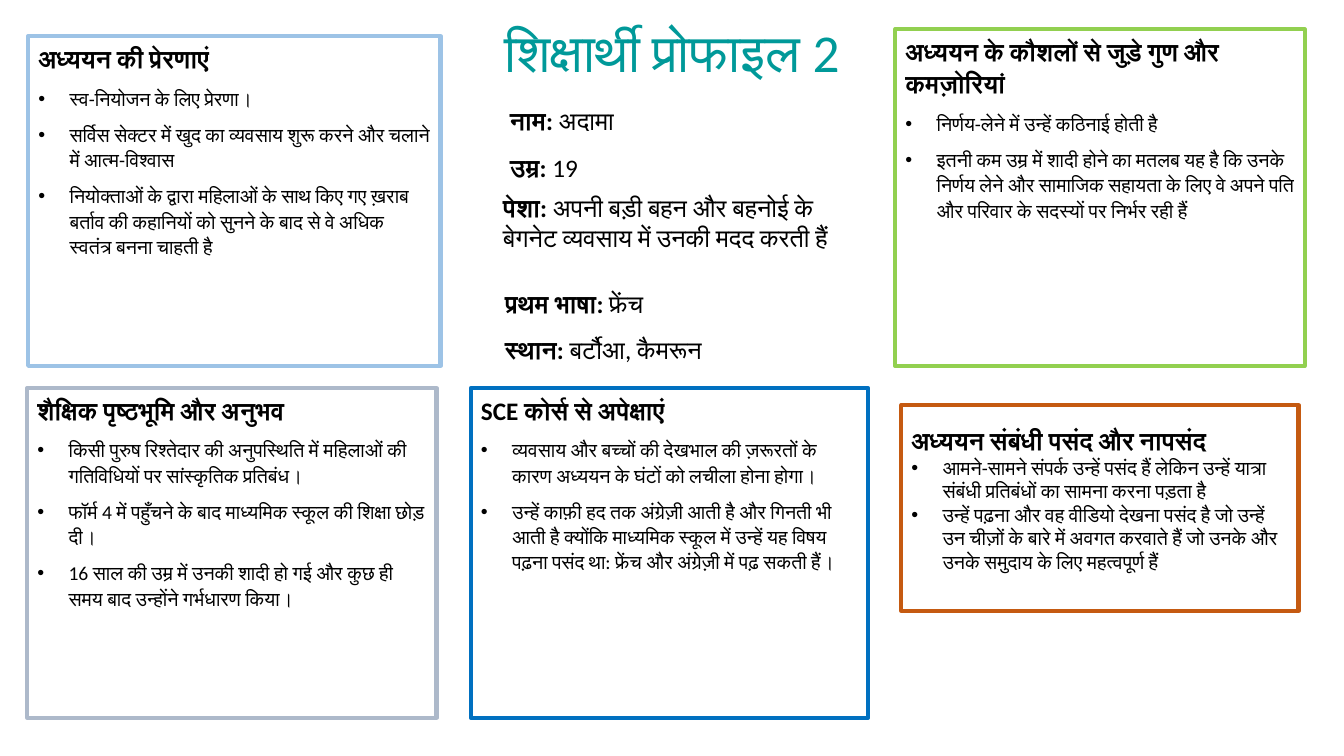
from dataclasses import dataclass
from typing import Optional

from lxml.etree import SubElement
from pptx import Presentation
from pptx.dml.color import RGBColor
from pptx.enum.shapes import MSO_SHAPE
from pptx.enum.text import MSO_ANCHOR, MSO_AUTO_SIZE, PP_ALIGN
from pptx.oxml.ns import qn
from pptx.shapes.autoshape import Shape
from pptx.slide import Slide
from pptx.text.text import TextFrame, _Paragraph
from pptx.util import Inches, Pt


@dataclass(frozen=True)
class Theme:
    font: str = "Calibri"
    ink: str = "000000"
    paper: str = "FFFFFF"
    title_color: str = "009999"
    title_size: int = 38
    heading_size: int = 18
    bullet_size: int = 14
    border_width: int = 3
    hanging: float = 0.31


@dataclass(frozen=True)
class Box:
    left: float
    top: float
    width: float
    height: float


@dataclass(frozen=True)
class Panel:
    box: Box
    border: str
    heading: str
    bullets: tuple[str, ...]
    placeholder: Optional[int] = None
    heading_spacing: float = 1.07
    bullet_spacing: float = 1.07
    space_after: int = 8


@dataclass(frozen=True)
class Fact:
    box: Box
    label: str
    value: str


THEME = Theme()

PANELS = (
    Panel(Box(0.28, 0.36, 4.09, 3.27), "9DC3E6", "अध्ययन की प्रेरणाएं", (
        "स्व-नियोजन के लिए प्रेरणा।",
        "सर्विस सेक्टर में खुद का व्यवसाय शुरू करने और चलाने में आत्म-विश्वास",
        "नियोक्ताओं के द्वारा महिलाओं के साथ किए गए ख़राब बर्ताव की कहानियों को "
        "सुनने के बाद से वे अधिक स्वतंत्र बनना चाहती है",
    ), placeholder=1),
    Panel(Box(8.88, 0.29, 4.06, 3.34), "92D050", "अध्ययन के कौशलों से जुड़े गुण और कमज़ोरियां", (
        "निर्णय-लेने में उन्हें कठिनाई होती है",
        "इतनी कम उम्र में शादी होने का मतलब यह है कि उनके निर्णय लेने और सामाजिक "
        "सहायता के लिए वे अपने पति और परिवार के सदस्यों पर निर्भर रही हैं",
    ), placeholder=2),
    Panel(Box(0.27, 3.85, 4.06, 3.27), "ADB9CA", "शैक्षिक पृष्ठभूमि और अनुभव", (
        "किसी पुरुष रिश्तेदार की अनुपस्थिति में महिलाओं की गतिविधियों पर सांस्कृतिक प्रतिबंध।",
        "फॉर्म 4 में पहुँचने के बाद माध्यमिक स्कूल की शिक्षा छोड़ दी।",
        "16 साल की उम्र में उनकी शादी हो गई और कुछ ही समय बाद उन्होंने गर्भधारण किया।",
    ), placeholder=3),
    Panel(Box(4.67, 3.85, 3.94, 3.27), "0070C0", "SCE कोर्स से अपेक्षाएं", (
        "व्यवसाय और बच्चों की देखभाल की ज़रूरतों के कारण अध्ययन के घंटों को लचीला होना होगा।",
        "उन्हें काफ़ी हद तक अंग्रेज़ी आती है और गिनती भी आती है क्योंकि माध्यमिक स्कूल में "
        "उन्हें यह विषय पढ़ना पसंद था: फ्रेंच और अंग्रेज़ी में पढ़ सकती हैं।",
    ), placeholder=4),
    Panel(Box(8.94, 4.02, 3.94, 2.04), "C55A11", "अध्ययन संबंधी पसंद और नापसंद", (
        "आमने-सामने संपर्क उन्हें पसंद हैं लेकिन उन्हें यात्रा संबंधी प्रतिबंधों का सामना करना पड़ता है",
        "उन्हें पढ़ना और वह वीडियो देखना पसंद है जो उन्हें उन चीज़ों के बारे में अवगत "
        "करवाते हैं जो उनके और उनके समुदाय के लिए महत्वपूर्ण हैं",
    ), heading_spacing=1.5, bullet_spacing=1.0, space_after=0),
)

FACTS = (
    Fact(Box(4.96, 1.0, 3.76, 0.4), "नाम:", " अदामा"),
    Fact(Box(4.96, 1.46, 3.17, 0.4), "उम्र:", " 19"),
    Fact(Box(4.89, 1.86, 3.45, 1.01), "पेशा:",
         " अपनी बड़ी बहन और बहनोई के बेगनेट व्यवसाय में उनकी मदद करती हैं"),
    Fact(Box(4.91, 2.81, 3.45, 0.4), "प्रथम भाषा:", " फ्रेंच"),
    Fact(Box(4.91, 3.27, 3.45, 0.4), "स्थान:", " बर्टौआ, कैमरून"),
)


def write(paragraph: _Paragraph, text: str, *, size: int, bold: bool = False,
          color: str = THEME.ink) -> None:
    run = paragraph.add_run()
    run.text = text
    run.font.size = Pt(size)
    run.font.bold = bold
    run.font.name = THEME.font
    run.font.color.rgb = RGBColor.from_string(color)
    SubElement(run.font._element, qn("a:cs"), typeface=THEME.font)


def format_paragraph(paragraph: _Paragraph, *, spacing: float = 1.0, before: int = 0,
                     after: int = 0, bullet: bool = False) -> None:
    paragraph.alignment = PP_ALIGN.LEFT
    paragraph.line_spacing = spacing
    paragraph.space_before = Pt(before)
    paragraph.space_after = Pt(after)
    properties = paragraph._p.get_or_add_pPr()
    hanging = Inches(THEME.hanging) if bullet else 0
    properties.set("marL", str(hanging))
    properties.set("indent", str(-hanging))
    if bullet:
        SubElement(properties, qn("a:buFont"), typeface="Arial")
        SubElement(properties, qn("a:buChar"), char="•")
    else:
        SubElement(properties, qn("a:buNone"))


def place(shape: Shape, box: Box) -> None:
    shape.left, shape.top = Inches(box.left), Inches(box.top)
    shape.width, shape.height = Inches(box.width), Inches(box.height)


def prepare_frame(shape: Shape, *, wrap: bool = True, grow: bool = False) -> TextFrame:
    frame = shape.text_frame
    frame.word_wrap = wrap
    frame.auto_size = MSO_AUTO_SIZE.SHAPE_TO_FIT_TEXT if grow else MSO_AUTO_SIZE.NONE
    frame.vertical_anchor = MSO_ANCHOR.TOP
    frame.margin_left = frame.margin_right = Inches(0.1)
    frame.margin_top = frame.margin_bottom = Inches(0.05)
    return frame


def draw_title(slide: Slide, text: str) -> None:
    title = slide.shapes.title
    place(title, Box(4.9, 0.21, 3.79, 0.68))
    paragraph = prepare_frame(title, wrap=False, grow=True).paragraphs[0]
    format_paragraph(paragraph, spacing=0.9, before=10)
    write(paragraph, text, size=THEME.title_size, color=THEME.title_color)


def draw_panel(slide: Slide, panel: Panel) -> None:
    if panel.placeholder is None:
        shape = slide.shapes.add_shape(MSO_SHAPE.RECTANGLE, 0, 0, 0, 0)
        shape.shadow.inherit = False
        shape.fill.background()
    else:
        shape = slide.placeholders[panel.placeholder]
        shape.fill.solid()
        shape.fill.fore_color.rgb = RGBColor.from_string(THEME.paper)
    place(shape, panel.box)
    shape.line.color.rgb = RGBColor.from_string(panel.border)
    shape.line.width = Pt(THEME.border_width)
    frame = prepare_frame(shape, grow=panel.placeholder is None)
    heading = frame.paragraphs[0]
    format_paragraph(heading, spacing=panel.heading_spacing, after=panel.space_after)
    write(heading, panel.heading, size=THEME.heading_size, bold=True)
    for text in panel.bullets:
        paragraph = frame.add_paragraph()
        format_paragraph(paragraph, spacing=panel.bullet_spacing,
                         after=panel.space_after, bullet=True)
        write(paragraph, text, size=THEME.bullet_size)


def draw_fact(slide: Slide, fact: Fact) -> None:
    shape = slide.shapes.add_textbox(0, 0, 0, 0)
    place(shape, fact.box)
    paragraph = prepare_frame(shape, grow=True).paragraphs[0]
    format_paragraph(paragraph)
    write(paragraph, fact.label, size=THEME.heading_size, bold=True)
    write(paragraph, fact.value, size=THEME.heading_size)


def main() -> None:
    presentation = Presentation()
    presentation.slide_width = Inches(13.33)
    presentation.slide_height = Inches(7.5)
    comparison_layout = presentation.slide_layouts[4]
    slide = presentation.slides.add_slide(comparison_layout)
    draw_title(slide, "शिक्षार्थी प्रोफाइल 2")
    for panel in PANELS:
        draw_panel(slide, panel)
    for fact in FACTS:
        draw_fact(slide, fact)
    presentation.save("out.pptx")


if __name__ == "__main__":
    main()
